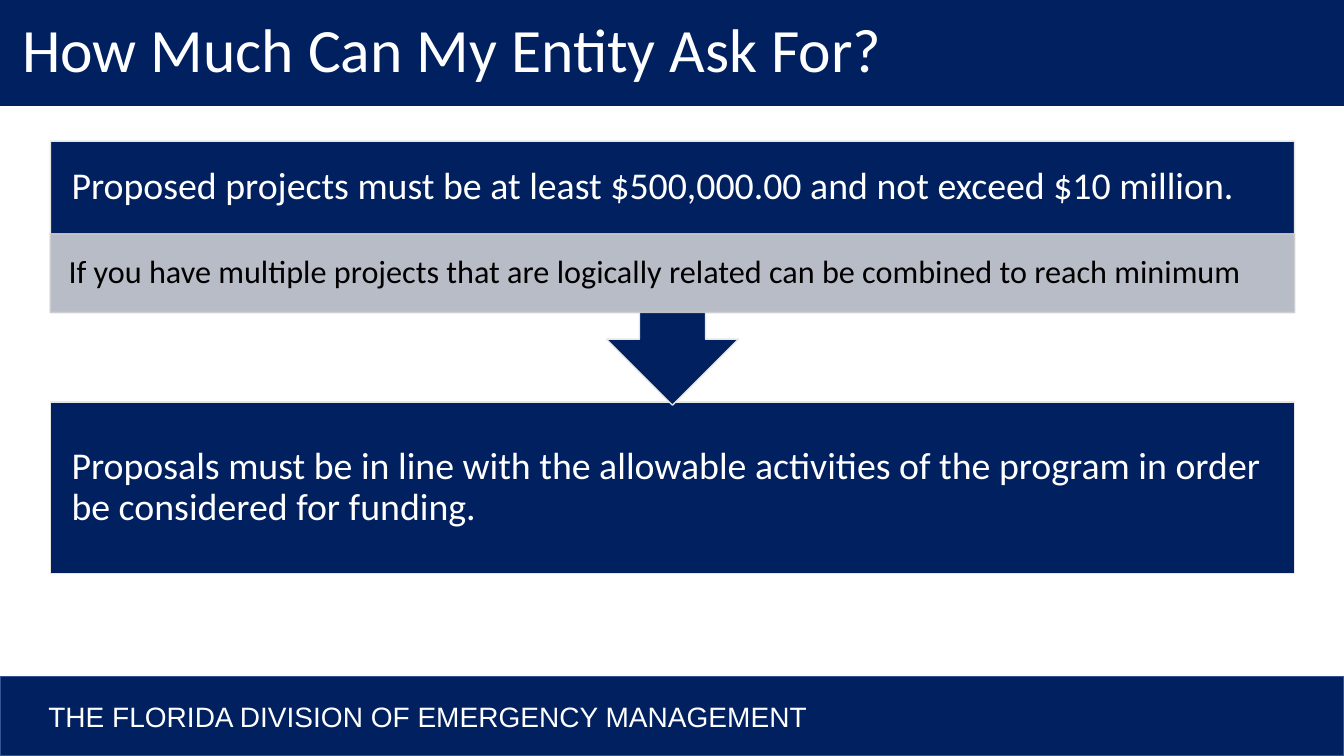
from dataclasses import dataclass

from lxml import etree
from pptx import Presentation
from pptx import util as u
from pptx.dml.color import RGBColor
from pptx.enum import shapes, text
from pptx.oxml import ns

NAVY, WHITE, BLACK = "002060", "FFFFFF", "000000"
PALE, GREY, FOOTER_EDGE = "E7E6E6", "CCCDD2", "325491"
SLIDE_WIDTH, SLIDE_HEIGHT = 13.33, 7.5
PANEL_LEFT, PANEL_WIDTH = 0.5, 12.34
RECTANGLE = shapes.MSO_SHAPE.RECTANGLE
Insets = tuple[float, float, float, float]


@dataclass
class Panel:
    words: str
    top: float
    height: float
    insets: Insets
    size: float = 27
    color: str = WHITE
    fill: str = NAVY
    line: str = PALE
    opacity: int = 100
    kind: shapes.MSO_SHAPE = RECTANGLE
    left: float = PANEL_LEFT
    width: float = PANEL_WIDTH
    font: str = "Calibri"
    line_spacing: float = 0.9


# The callout's body reaches behind the grey band, so its bottom inset adds the band's height.
BAND_HEIGHT = 0.78
PANELS = [
    Panel("THE FLORIDA DIVISION OF EMERGENCY MANAGEMENT", 6.71, 0.79,
          (0.48, 0.05, 0.1, 0.05), size=20, line=FOOTER_EDGE, left=0,
          width=SLIDE_WIDTH, font="Arial", line_spacing=1),
    Panel("Proposals must be in line with the allowable activities of the program "
          "in order be considered for funding.", 3.99, 1.7, (0.21,) * 4),
    Panel("Proposed projects must be at least $500,000.00 and not exceed $10 million.",
          1.4, 2.62, (0.21, 0.21, 0.21, 0.21 + BAND_HEIGHT),
          kind=shapes.MSO_SHAPE.DOWN_ARROW_CALLOUT),
    Panel("If you have multiple projects that are logically related can be combined "
          "to reach minimum", 2.32, BAND_HEIGHT, (0.18, 0.03, 0.18, 0.03),
          size=23, color=BLACK, fill=GREY, line=GREY, opacity=90),
]


def paint(target, color: str, opacity: int = 100) -> None:
    """Give a shape or its line a solid colour, optionally see-through."""
    target.fill.solid()
    target.fill.fore_color.rgb = RGBColor.from_string(color)
    if opacity < 100:
        element = target._element if hasattr(target, "_element") else target._ln
        fill = next(element.iter(ns.qn("a:solidFill")))
        etree.SubElement(fill[0], ns.qn("a:alpha"), val=str(opacity * 1000))


def write(box, words: str, *, size: float, color: str, font: str,
          insets: Insets, line_spacing: float) -> None:
    frame = box.text_frame
    frame.word_wrap = True
    frame.auto_size = text.MSO_AUTO_SIZE.NONE
    frame.vertical_anchor = text.MSO_ANCHOR.MIDDLE
    (frame.margin_left, frame.margin_top,
     frame.margin_right, frame.margin_bottom) = map(u.Inches, insets)
    para = frame.paragraphs[0]
    para.alignment = text.PP_ALIGN.LEFT
    para.line_spacing = line_spacing
    span = para.add_run()
    span.text = words
    span.font.size = u.Pt(size)
    span.font.name = font
    span.font.color.rgb = RGBColor.from_string(color)


def add_panel(page, panel: Panel) -> None:
    box = page.shapes.add_shape(
        panel.kind, *map(u.Inches, (panel.left, panel.top, panel.width, panel.height)))
    box.shadow.inherit = False
    paint(box, panel.fill, panel.opacity)
    box.line.width = u.Pt(1)
    paint(box.line, panel.line, panel.opacity)
    write(box, panel.words, size=panel.size, color=panel.color, font=panel.font,
          insets=panel.insets, line_spacing=panel.line_spacing)


def add_title(page, words: str) -> None:
    title = page.shapes.title
    title.left = title.top = u.Inches(0)
    title.width, title.height = u.Inches(SLIDE_WIDTH), u.Inches(1.05)
    paint(title, NAVY)
    write(title, words, size=44, color=WHITE, font="Calibri",
          insets=(0.22, 0.05, 0.1, 0.05), line_spacing=0.9)


def main() -> None:
    deck = Presentation()
    deck.slide_width, deck.slide_height = u.Inches(SLIDE_WIDTH), u.Inches(SLIDE_HEIGHT)
    page = deck.slides.add_slide(deck.slide_layouts.get_by_name("Title Only"))
    add_title(page, "How Much Can My Entity Ask For?")
    for panel in PANELS:
        add_panel(page, panel)
    deck.save("out.pptx")


if __name__ == "__main__":
    main()
